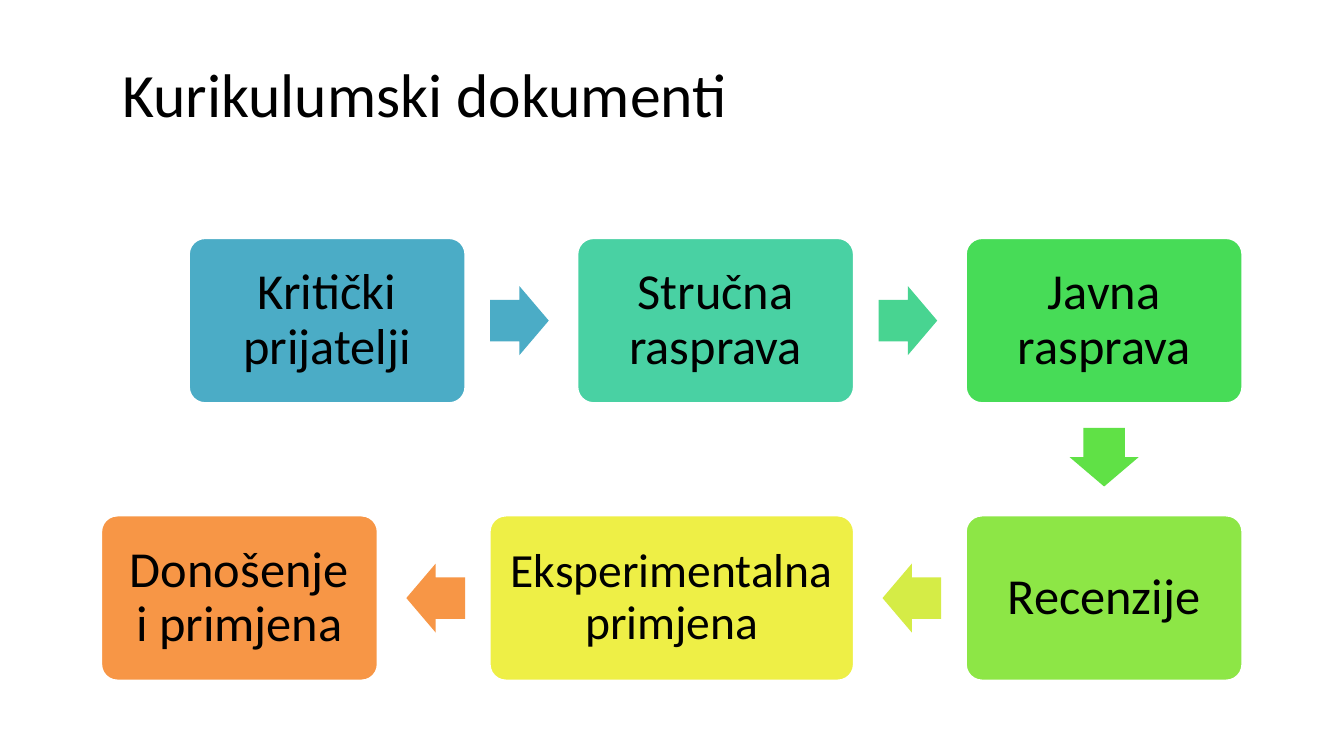
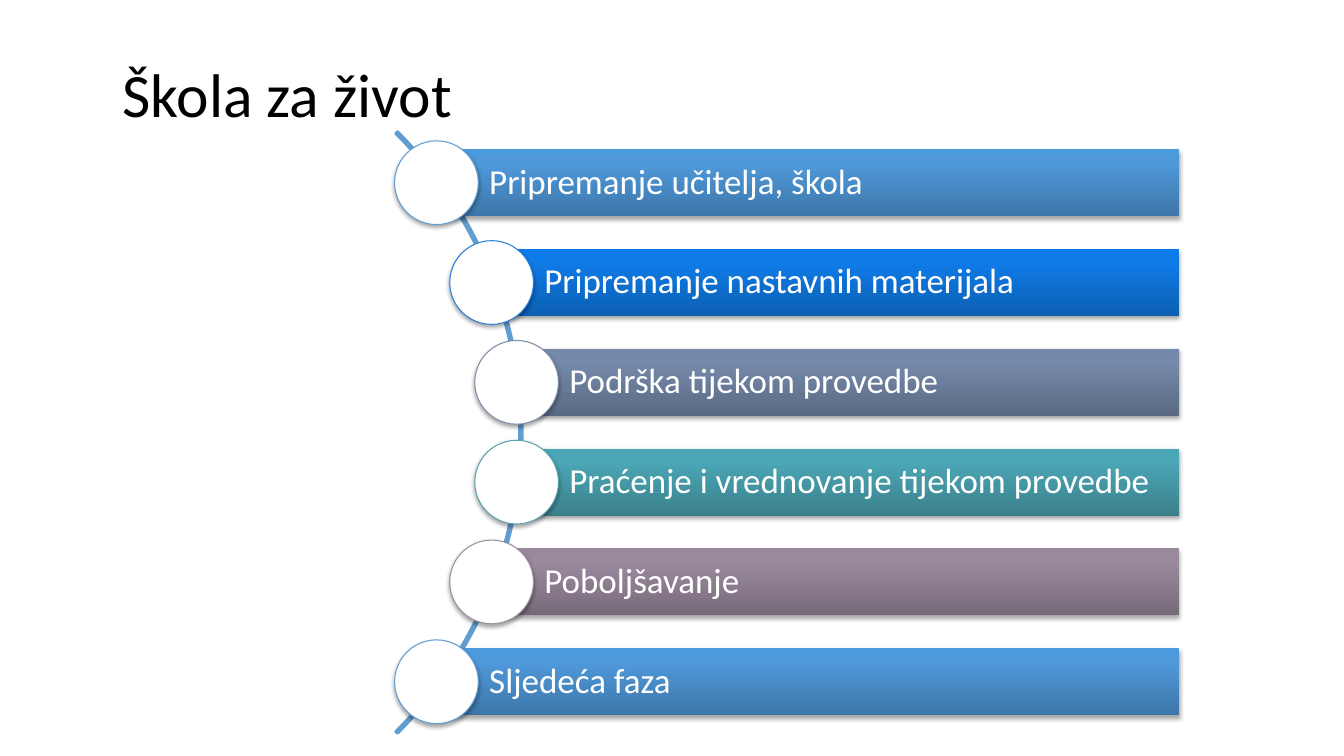
from lxml.etree import SubElement
from pptx import Presentation
from pptx.dml.color import RGBColor
from pptx.enum.shapes import MSO_SHAPE
from pptx.enum.text import MSO_ANCHOR, PP_ALIGN
from pptx.oxml.ns import qn
from pptx.util import Cm, Pt

FONT, BLACK, WHITE = "Calibri", "000000", "FFFFFF"
TITLE_BOX = {"left": Cm(2.83), "top": Cm(0.74), "width": Cm(29.92), "height": Cm(3.18)}

BOX_W, WIDE_W, BOX_H = 6.99, 9.2, 4.18
LEFT_X, FIRST_X, COLUMN_STEP = 2.54, 4.75, 9.79
UPPER_Y, LOWER_Y = 5.99, 12.98
ARROW_W, ARROW_H, ARROW_GAP = 1.48, 1.74, 0.61
WIDE_X = FIRST_X + COLUMN_STEP + BOX_W - WIDE_W
LAST_X = FIRST_X + 2 * COLUMN_STEP
RIGHT, DOWN, LEFT = (1, 0, 0), (0, 1, 90), (-1, 0, 180)
STEPS = [
    ("Kritički prijatelji", FIRST_X, UPPER_Y, BOX_W, 36, 0.38, "4BACC6", RIGHT, "4BACC6"),
    ("Stručna rasprava", FIRST_X + COLUMN_STEP, UPPER_Y, BOX_W, 36, 0.38, "49D1A3", RIGHT, "48D491"),
    ("Javna rasprava", LAST_X, UPPER_Y, BOX_W, 36, 0.38, "47DC57", DOWN, "60E146"),
    ("Recenzije", LAST_X, LOWER_Y, BOX_W, 36, 0.38, "8DE646", LEFT, "D5EC46"),
    ("Eksperimentalna primjena", WIDE_X, LOWER_Y, WIDE_W, 34, 0.3, "EEEF46", LEFT, "F79646"),
    ("Donošenje i primjena", LEFT_X, LOWER_Y, BOX_W, 36, 0.38, "F79646", None, None),
]

BAR_TOP, BAR_STEP, BAR_H, BAR_RIGHT, CIRCLE = 3.76, 2.515, 1.69, 29.71, 2.11
BLUE = ("3D76A8", "4F99DB", "4C9ADE")
BARS = [
    ("Pripremanje učitelja, škola", 11.0, BLUE, "629DD1"),
    ("Pripremanje nastavnih materijala", 12.39, ("0B5FB2", "0F7BE7", "0B7CED"), "297FD5"),
    ("Podrška tijekom provedbe", 13.02, ("5A6A83", "7589AA", "748AAC"), "7F8FA9"),
    ("Praćenje i vrednovanje tijekom provedbe", 13.02, ("3A808B", "4BA6B5", "49A8B8"), "5AA2AE"),
    ("Poboljšavanje", 12.39, ("766A79", "9A899D", "9B899E"), "9D90A0"),
    ("Sljedeća faza", 11.0, BLUE, "629DD1"),
]


def rgb(value):
    """Turn a hex string into a colour."""
    return RGBColor.from_string(value)


def set_all(obj, values):
    """Set every attribute in a dict of format values."""
    for name, value in values.items():
        setattr(obj, name, value)


def write(tf, text, size, color, align, spacing=0.9, margins=None):
    """Write one formatted paragraph into a text frame."""
    set_all(tf, {"word_wrap": True, "vertical_anchor": MSO_ANCHOR.MIDDLE, **(margins or {})})
    p = tf.paragraphs[0]
    set_all(p, {"alignment": align, "line_spacing": spacing})
    r = p.add_run()
    r.text = text
    set_all(r.font, {"name": FONT, "size": Pt(size)})
    r.font.color.rgb = rgb(color)


def margins(left, other):
    """Give the four text margins, the left one apart."""
    names = ("margin_top", "margin_right", "margin_bottom")
    return {"margin_left": Cm(left), **{name: Cm(other) for name in names}}


def add_shape(s, kind, box, fill=None, line=None, width=1, adjust=()):
    """Add a flat preset shape, with box in centimetres."""
    sp = s.shapes.add_shape(kind, *(Cm(v) for v in box))
    for i, value in enumerate(adjust):
        sp.adjustments[i] = value
    if fill:
        sp.fill.solid()
        sp.fill.fore_color.rgb = rgb(fill)
    else:
        sp.fill.background()
    if line:
        sp.line.color.rgb = rgb(line)
        sp.line.width = Pt(width)
    else:
        sp.line.fill.background()
    sp.shadow.inherit = False
    return sp


def add_shadow(sp):
    """Give a shape a soft shadow below it."""
    effects = sp._element.spPr.find(qn("a:effectLst"))
    shadow = SubElement(effects, qn("a:outerShdw"), blurRad="40000", dist="23000",
                        dir="5400000", rotWithShape="0")
    color = SubElement(shadow, qn("a:srgbClr"), val=BLACK)
    SubElement(color, qn("a:alpha"), val="35000")


def fill_gradient(sp, colors):
    """Fill a shape with three colours from bottom to top."""
    sp.fill.gradient()
    sp.fill.gradient_angle = 90
    stops = sp._element.spPr.find(qn("a:gradFill")).find(qn("a:gsLst"))
    for stop in list(stops):
        stops.remove(stop)
    for position, color in zip((0, 80000, 100000), colors):
        stop = SubElement(stops, qn("a:gs"), pos=str(position))
        SubElement(stop, qn("a:srgbClr"), val=color)


def add_slide(prs, title):
    """Add a slide with the shared title style."""
    s = prs.slides.add_slide(prs.slide_layouts[5])
    set_all(s.shapes.title, TITLE_BOX)
    write(s.shapes.title.text_frame, title, 44, BLACK, PP_ALIGN.LEFT, 1.0)
    return s


def add_step(s, text, x, y, w, size, inset, color, direction, arrow_color):
    """Add a process box and the arrow that leaves it."""
    sp = add_shape(s, MSO_SHAPE.ROUNDED_RECTANGLE, (x, y, w, BOX_H), color, WHITE, 2, [0.1])
    write(sp.text_frame, text, size, BLACK, PP_ALIGN.CENTER, margins=margins(inset, inset))
    if direction:
        dx, dy, angle = direction
        reach = ARROW_GAP + ARROW_W / 2
        center_x = x + w / 2 + dx * (w / 2 + reach)
        center_y = y + BOX_H / 2 + dy * (BOX_H / 2 + reach)
        box = (center_x - ARROW_W / 2, center_y - ARROW_H / 2, ARROW_W, ARROW_H)
        arrow = add_shape(s, MSO_SHAPE.RIGHT_ARROW, box, arrow_color, adjust=[0.6, 0.5])
        arrow.rotation = angle


def add_bar(s, row, text, x, colors, outline):
    """Add a gradient bar with a circle at its left end."""
    y = BAR_TOP + row * BAR_STEP
    bar = add_shape(s, MSO_SHAPE.RECTANGLE, (x, y, BAR_RIGHT - x, BAR_H))
    fill_gradient(bar, colors)
    write(bar.text_frame, text, 25, WHITE, PP_ALIGN.LEFT, margins=margins(1.33, 0.18))
    box = (x - CIRCLE / 2, y + (BAR_H - CIRCLE) / 2, CIRCLE, CIRCLE)
    circle = add_shape(s, MSO_SHAPE.OVAL, box, WHITE, outline, 0.75)
    for sp in (bar, circle):
        add_shadow(sp)


def main():
    """Build and save the two slides."""
    prs = Presentation()
    set_all(prs, {"slide_width": Cm(33.87), "slide_height": Cm(19.05)})

    s = add_slide(prs, "Kurikulumski dokumenti")
    for step in STEPS:
        add_step(s, *step)

    s = add_slide(prs, "Škola za život")
    add_shape(s, MSO_SHAPE.BLOCK_ARC, (-8.28, 0.18, 21.44, 21.44), None, "629DD1", 2,
              [189, 27, 0.003])
    for row, bar in enumerate(BARS):
        add_bar(s, row, *bar)

    prs.save("out.pptx")


if __name__ == "__main__":
    main()
